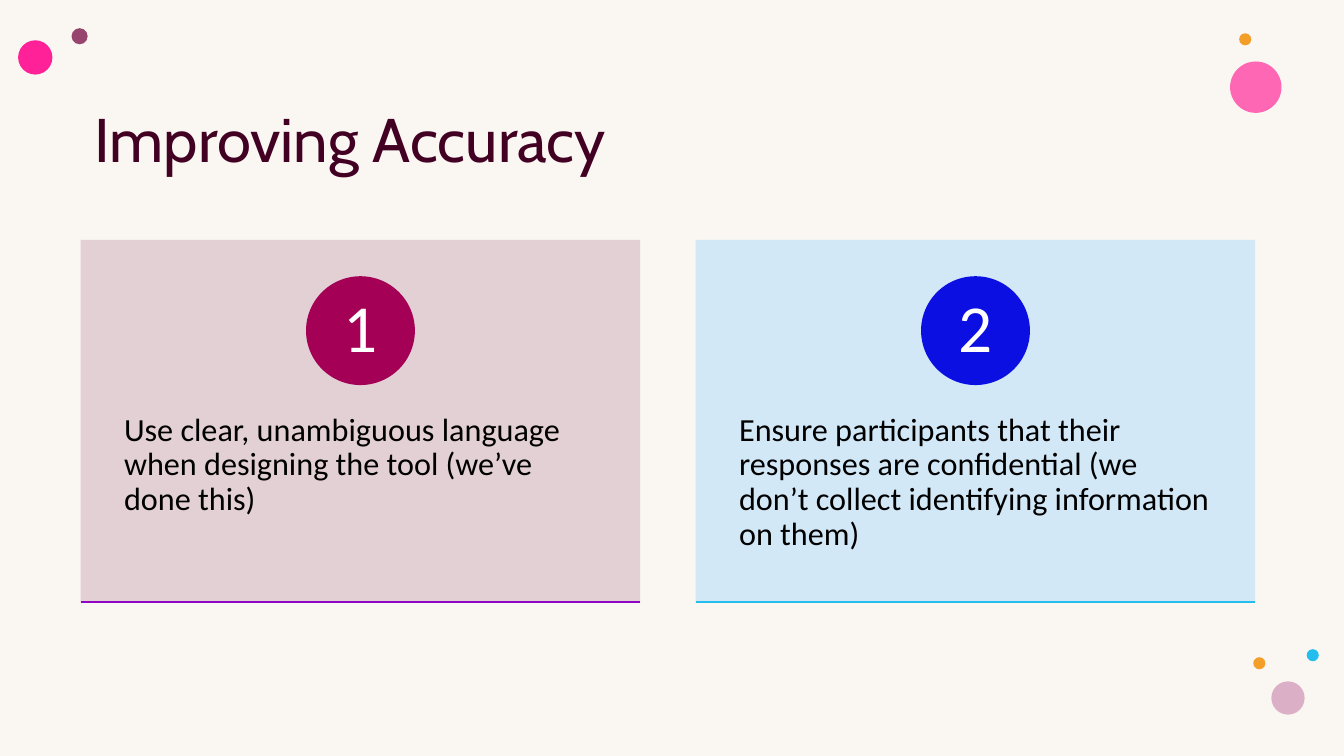
"""Build the "Improving Accuracy" slide with two numbered cards."""
from dataclasses import dataclass

from lxml import etree
from pptx import Presentation
from pptx.dml.color import RGBColor
from pptx.enum.shapes import MSO_CONNECTOR, MSO_SHAPE
from pptx.enum.text import MSO_ANCHOR, PP_ALIGN
from pptx.oxml.ns import qn
from pptx.util import Inches, Pt

OVAL = MSO_SHAPE.OVAL
RECTANGLE = MSO_SHAPE.RECTANGLE
STRAIGHT = MSO_CONNECTOR.STRAIGHT
TOP, MIDDLE = MSO_ANCHOR.TOP, MSO_ANCHOR.MIDDLE
LEFT, CENTER = PP_ALIGN.LEFT, PP_ALIGN.CENTER


@dataclass(frozen=True)
class Theme:
    """Colours, fonts and type sizes of the slide."""
    background: str = "FAF6F2"
    title: str = "420023"
    body: str = "000000"
    number: str = "FFFFFF"
    plum: str = "97446E"
    rose: str = "FE67B4"
    magenta: str = "FF2197"
    mauve: str = "DBAFC5"
    orange: str = "F39E29"
    sky: str = "24BEEE"
    pink_card: str = "E3D0D4"
    pink_badge: str = "A40056"
    violet: str = "9005C4"
    blue_card: str = "D2E8F7"
    blue_badge: str = "0B0FE2"
    title_font: str = "Cabin"
    body_font: str = "Calibri"
    title_size: int = 44
    body_size: int = 23
    number_size: int = 48


THEME = Theme()

DOTS = [
    (0.71, 0.28, 0.16, THEME.plum),
    (0.18, 0.4, 0.34, THEME.magenta),
    (12.2, 0.61, 0.51, THEME.rose),
    (12.29, 0.33, 0.12, THEME.orange),
    (12.96, 6.44, 0.12, THEME.sky),
    (12.61, 6.76, 0.33, THEME.mauve),
    (12.43, 6.52, 0.12, THEME.orange),
]

CARDS = [
    ("Use clear, unambiguous language when designing the tool (we’ve done this)",
     THEME.pink_card, THEME.pink_badge, THEME.violet),
    ("Ensure participants that their responses are confidential "
     "(we don’t collect identifying information on them)",
     THEME.blue_card, THEME.blue_badge, THEME.sky),
]

CARD_LEFT, CARD_TOP = 0.8, 2.38
CARD_WIDTH, CARD_HEIGHT = 5.55, 3.6
CARD_STEP = 6.1
BADGE_TOP, BADGE_SIZE = 2.74, 1.08
BODY_TOP, BODY_HEIGHT = 3.74, 2.16


def add_filled(slide, preset, left, top, width, height, color):
    """Add a preset shape in one flat colour."""
    filled = slide.shapes.add_shape(
        preset, Inches(left), Inches(top), Inches(width), Inches(height))
    filled.shadow.inherit = False
    filled.fill.solid()
    filled.fill.fore_color.rgb = RGBColor.from_string(color)
    filled.line.fill.background()
    return filled


def write_text(holder, text, font, size, color, insets, align=LEFT, anchor=TOP):
    """Write one styled paragraph; insets are horizontal and vertical inches."""
    frame = holder.text_frame
    frame.word_wrap = True
    frame.vertical_anchor = anchor
    frame.margin_left = frame.margin_right = Inches(insets[0])
    frame.margin_top = frame.margin_bottom = Inches(insets[1])
    paragraph = frame.paragraphs[0]
    paragraph.alignment = align
    paragraph.line_spacing = 0.9
    run = paragraph.add_run()
    run.text = text
    run.font.name = font
    run.font.size = Pt(size)
    run.font.color.rgb = RGBColor.from_string(color)


def add_text(slide, left, top, width, height, *style):
    """Add a text box holding one styled paragraph."""
    box = slide.shapes.add_textbox(
        Inches(left), Inches(top), Inches(width), Inches(height))
    write_text(box, *style)


def add_rule(slide, left, top, width, color):
    """Add a thin horizontal line."""
    rule = slide.shapes.add_connector(
        STRAIGHT, Inches(left), Inches(top), Inches(left + width), Inches(top))
    rule.line.color.rgb = RGBColor.from_string(color)
    rule.line.width = Pt(1.5)
    etree.SubElement(rule._element.spPr, qn("a:effectLst"))


def add_card(slide, number, left, text, card_color, badge_color, rule_color):
    """Add a card with its number badge, text and bottom rule."""
    add_filled(slide, RECTANGLE, left, CARD_TOP, CARD_WIDTH, CARD_HEIGHT, card_color)
    add_text(slide, left, BODY_TOP, CARD_WIDTH, BODY_HEIGHT, text,
             THEME.body_font, THEME.body_size, THEME.body, (0.43, 0.36))
    badge_left = left + (CARD_WIDTH - BADGE_SIZE) / 2
    badge = add_filled(slide, OVAL, badge_left, BADGE_TOP,
                       BADGE_SIZE, BADGE_SIZE, badge_color)
    write_text(badge, str(number), THEME.body_font, THEME.number_size,
               THEME.number, (0.08, 0.01), CENTER, MIDDLE)
    add_rule(slide, left, CARD_TOP + CARD_HEIGHT - 0.01, CARD_WIDTH, rule_color)


def main():
    """Build and save the slide."""
    deck = Presentation()
    deck.slide_width, deck.slide_height = Inches(13.33), Inches(7.5)
    slide = deck.slides.add_slide(deck.slide_layouts[6])
    slide.background.fill.solid()
    slide.background.fill.fore_color.rgb = RGBColor.from_string(THEME.background)

    for left, top, size, color in DOTS:
        add_filled(slide, OVAL, left, top, size, size, color)
    add_text(slide, 0.84, 1.04, 11.78, 1.2, "Improving Accuracy",
             THEME.title_font, THEME.title_size, THEME.title, (0.1, 0.05))
    for index, card in enumerate(CARDS):
        add_card(slide, index + 1, CARD_LEFT + index * CARD_STEP, *card)

    deck.save("out.pptx")


if __name__ == "__main__":
    main()
